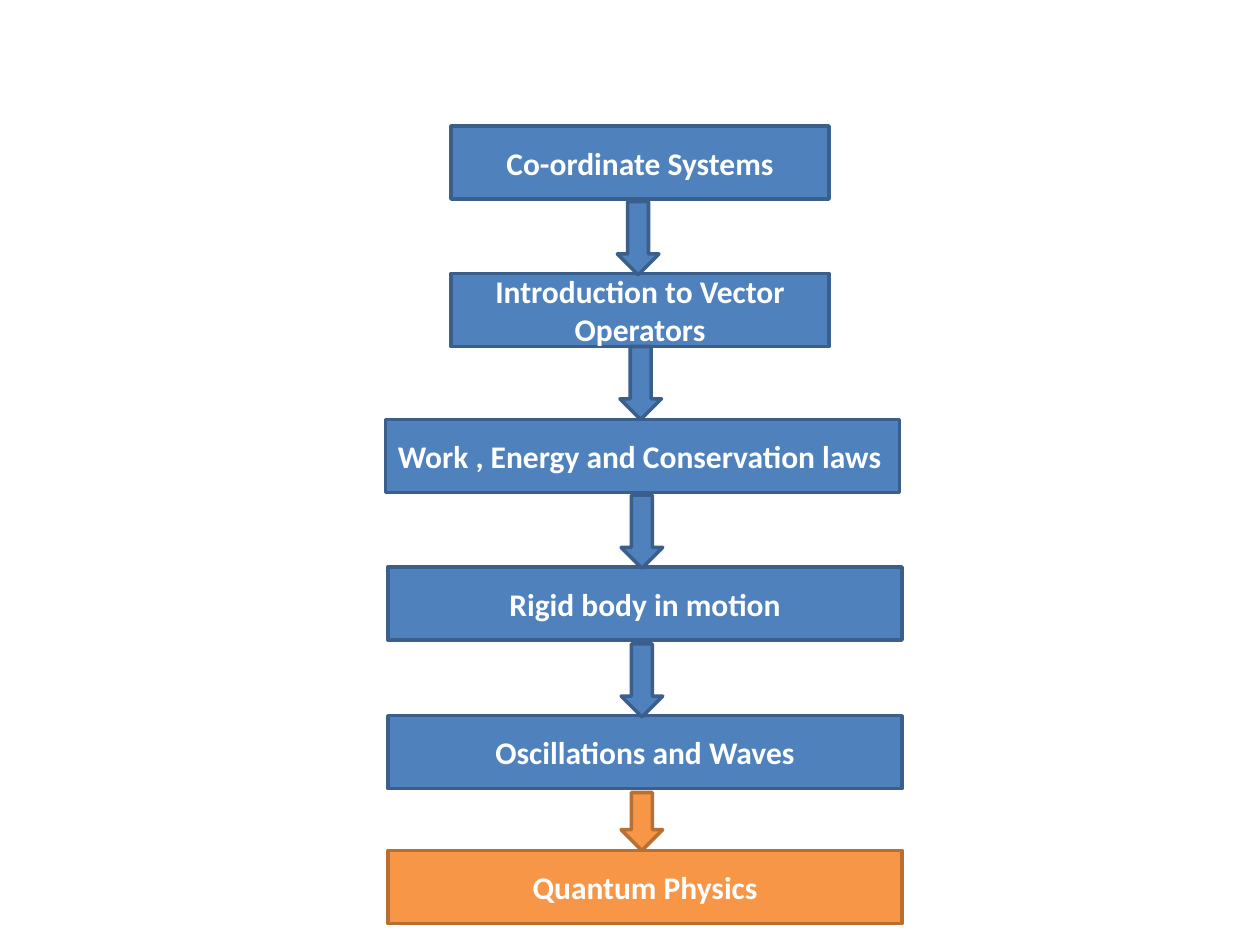
from pptx import Presentation
from pptx.dml.color import RGBColor
from pptx.enum.shapes import MSO_SHAPE
from pptx.enum.text import MSO_ANCHOR, PP_ALIGN
from pptx.util import Inches, Pt

RECTANGLE = MSO_SHAPE.RECTANGLE
DOWN_ARROW = MSO_SHAPE.DOWN_ARROW
MIDDLE = MSO_ANCHOR.MIDDLE
LEFT, CENTER = PP_ALIGN.LEFT, PP_ALIGN.CENTER

BLUE = ("4F81BD", "3A5F8C")
ORANGE = ("F79646", "B76F34")
BOX_HEIGHT = 0.58
ARROW_WIDTH = 0.33
TOPIC_FONT = {"name": "Calibri", "size": Pt(18), "bold": True}

TOPICS = [
    ("Co-ordinate Systems", 3.58, 1, 3, CENTER, BLUE),
    ("Introduction to Vector Operators", 3.58, 2.17, 3, CENTER, BLUE),
    ("Work , Energy and Conservation laws", 3.06, 3.33, 4.08, LEFT, BLUE),
    ("Rigid body in motion", 3.08, 4.5, 4.08, CENTER, BLUE),
    ("Oscillations and Waves", 3.08, 5.68, 4.08, CENTER, BLUE),
    ("Quantum Physics", 3.08, 6.75, 4.08, CENTER, ORANGE),
]
STEPS = [
    (4.9, 1.6, 0.58, BLUE),
    (4.92, 2.75, 0.58, BLUE),
    (4.93, 3.93, 0.58, BLUE),
    (4.93, 5.11, 0.58, BLUE),
    (4.93, 6.29, 0.46, ORANGE),
]


def color(hex_value):
    return RGBColor.from_string(hex_value)


def add_block(slide, preset, left, top, width, height, palette):
    block = slide.shapes.add_shape(
        preset, Inches(left), Inches(top), Inches(width), Inches(height))
    fill, outline = palette
    block.shadow.inherit = False
    block.fill.solid()
    block.fill.fore_color.rgb = color(fill)
    block.line.color.rgb = color(outline)
    block.line.width = Pt(2)
    return block


def add_topic(slide, title, left, top, width, alignment, palette):
    topic = add_block(slide, RECTANGLE, left, top, width, BOX_HEIGHT, palette)
    frame = topic.text_frame
    frame.word_wrap = True
    frame.vertical_anchor = MIDDLE
    paragraph = frame.paragraphs[0]
    paragraph.alignment = alignment
    run = paragraph.add_run()
    run.text = title
    for attribute, value in TOPIC_FONT.items():
        setattr(run.font, attribute, value)
    run.font.color.rgb = color("FFFFFF")


def add_step(slide, left, top, height, palette):
    add_block(slide, DOWN_ARROW, left, top, ARROW_WIDTH, height, palette)


def main():
    deck = Presentation()
    deck.slide_width, deck.slide_height = Inches(10), Inches(7.5)
    slide = deck.slides.add_slide(deck.slide_layouts[6])
    for topic in TOPICS:
        add_topic(slide, *topic)
    for step in STEPS:
        add_step(slide, *step)
    deck.save("out.pptx")


if __name__ == "__main__":
    main()
